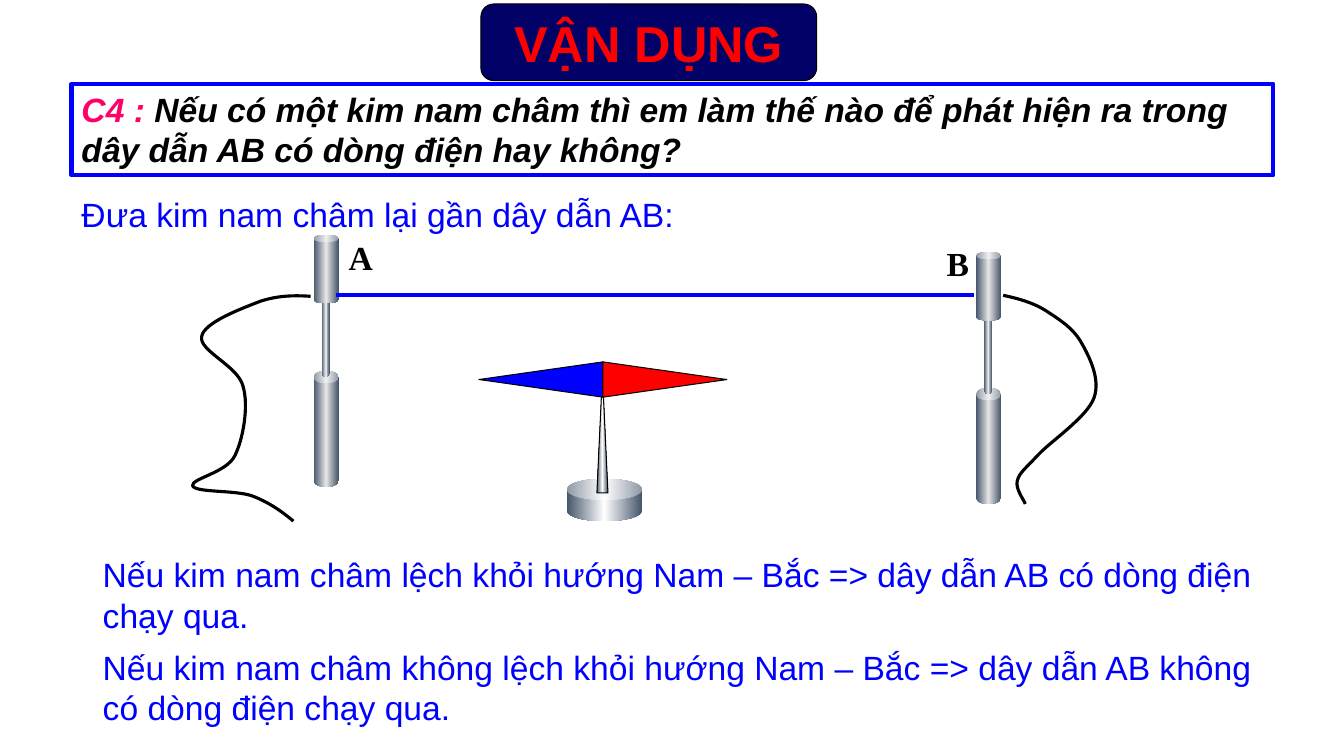
from copy import deepcopy
from dataclasses import dataclass

from pptx import Presentation
from pptx.dml.color import RGBColor
from pptx.enum.shapes import MSO_CONNECTOR, MSO_SHAPE
from pptx.enum.text import MSO_ANCHOR, MSO_AUTO_SIZE, PP_ALIGN
from pptx.oxml.ns import qn
from pptx.oxml.xmlchemy import OxmlElement
from pptx.util import Pt

PX = 9144  # EMU in one px, 100 px to the inch


@dataclass(frozen=True)
class Theme:
    blue: str = "0000FF"
    red: str = "FF0000"
    pink: str = "FF0066"
    navy: str = "000066"
    black: str = "000000"
    white: str = "FFFFFF"
    steel: str = "44546A"
    silver: str = "E7E6E6"
    sans: str = "Arial"
    serif: str = "Times New Roman"
    title_size: int = 36
    body_size: int = 24
    thin: float = 0.75
    lead: float = 2.25
    thick: float = 3


THEME = Theme()


@dataclass(frozen=True)
class Box:
    left: int
    top: int
    width: int
    height: int

    def inside(self, left, top, width, height):
        return Box(self.left + left, self.top + top, width, height)

    def emu(self):
        return [value * PX for value in (self.left, self.top, self.width, self.height)]


def set_line(shape, color=None, width=THEME.thin):
    if color is None:
        shape.line.fill.background()
    else:
        shape.line.color.rgb = RGBColor.from_string(color)
        shape.line.width = Pt(width)


def add_shape(shapes, kind, box, fill=None, line=None, width=THEME.thin, rotation=0):
    shape = shapes.add_shape(kind, *box.emu())
    shape.shadow.inherit = False
    shape.rotation = rotation
    if fill:
        shape.fill.solid()
        shape.fill.fore_color.rgb = RGBColor.from_string(fill)
    else:
        shape.fill.background()
    set_line(shape, line, width)
    return shape


def add_metal(shapes, kind, box, shine, bend=0.5, line=None):
    """Add a shape with a steel gradient that shines in the middle."""
    shape = add_shape(shapes, kind, box, line=line)
    shape.adjustments[0] = bend
    shape.fill.gradient()
    shape.fill.gradient_angle = 0
    first = next(shape._element.iter(qn("a:gs")))
    first.addnext(deepcopy(first))
    colors = (THEME.steel, shine, THEME.steel)
    for stop, position, color in zip(shape.fill.gradient_stops, (0, 0.5, 1), colors):
        stop.position = position
        stop.color.rgb = RGBColor.from_string(color)
    return shape


def write(shape, *runs, font=THEME.sans, size=THEME.body_size, bold=False,
          italic=False, align=PP_ALIGN.LEFT, anchor=MSO_ANCHOR.TOP, wrap=True, grow=True):
    """Write (text, color) runs as the one paragraph of a shape."""
    frame = shape.text_frame
    frame.word_wrap = wrap
    frame.vertical_anchor = anchor
    frame.auto_size = MSO_AUTO_SIZE.SHAPE_TO_FIT_TEXT if grow else MSO_AUTO_SIZE.NONE
    paragraph = frame.paragraphs[0]
    paragraph.alignment = align
    for text, color in runs:
        run = paragraph.add_run()
        run.text = text
        run.font.name = font
        run.font.size = Pt(size)
        run.font.bold = bold
        run.font.italic = italic
        run.font.color.rgb = RGBColor.from_string(color)


def add_text(shapes, box, text, color=THEME.blue, **style):
    write(shapes.add_textbox(*box.emu()), (text, color), **style)


def add_curve(shapes, box, start, points):
    """Draw cubic curves; points are taken in threes, relative to the box."""
    builder = shapes.build_freeform(*start, scale=PX)
    builder.add_line_segments(points, close=False)
    shape = builder.convert_to_shape(box.left * PX, box.top * PX)
    shape.shadow.inherit = False
    shape.fill.background()
    set_line(shape, THEME.black, THEME.lead)
    segments = list(shape._element.iter(qn("a:lnTo")))
    for index in range(0, len(segments), 3):
        curve = OxmlElement("a:cubicBezTo")
        segments[index].addprevious(curve)
        for segment in segments[index:index + 3]:
            curve.append(segment[0])
            segment.getparent().remove(segment)


def add_pole(shapes, box):
    group = shapes.add_group_shape().shapes
    parts = (
        (box.inside(0, 135, box.width, 115), 0.48),
        (box.inside(8, 47, 8, 94), 1.185),
        (box.inside(0, 0, box.width, 68), 0.282),
    )
    for part, bend in parts:
        add_metal(group, MSO_SHAPE.CAN, part, THEME.silver, bend)


def add_wire(shapes, box):
    left, top, width, _ = box.emu()
    wire = shapes.add_connector(MSO_CONNECTOR.STRAIGHT, left, top, left + width, top)
    wire._element.spPr.append(OxmlElement("a:effectLst"))
    set_line(wire, THEME.blue, THEME.thick)
    # The line must come before the effect list.
    effects = wire._element.spPr.find(qn("a:effectLst"))
    wire._element.spPr.append(effects)


def add_circuit(shapes, box):
    add_pole(shapes, box.inside(122, 0, 25, 250))
    add_wire(shapes, box.inside(144, 60, 633, 0))
    add_curve(shapes, box.inside(806, 60, 98, 207), (0, 0), [
        (14, 3), (29, 7), (42, 15), (54, 23), (68, 31), (77, 46),
        (85, 60), (97, 83), (90, 102), (83, 121), (47, 145), (35, 158),
        (22, 172), (16, 176), (14, 184), (12, 192), (20, 202), (22, 207)])
    add_curve(shapes, box.inside(0, 60, 119, 224), (119, 1), [
        (103, 0), (87, 0), (69, 6), (51, 13), (13, 27), (11, 41),
        (8, 55), (47, 70), (52, 90), (58, 110), (52, 143), (44, 159),
        (36, 176), (0, 182), (2, 189), (5, 196), (44, 193), (61, 199),
        (77, 205), (90, 214), (102, 224)])
    add_pole(shapes, box.inside(779, 17, 25, 250))
    for label, left, top in (("A", 147, -3), ("B", 740, 3)):
        add_text(shapes, box.inside(left, top, 50, 50), label, THEME.black,
                 font=THEME.serif, bold=True)


def add_compass(shapes, box):
    add_metal(shapes, MSO_SHAPE.CAN, box.inside(87, 116, 75, 42), THEME.white)
    add_metal(shapes, MSO_SHAPE.ISOSCELES_TRIANGLE, box.inside(117, 13, 11, 117),
              THEME.white, line=THEME.black)
    needle = shapes.add_group_shape().shapes
    for left, color, rotation in ((44, THEME.blue, 90), (167, THEME.red, 270)):
        add_shape(needle, MSO_SHAPE.FLOWCHART_MERGE, box.inside(left, -44, 35, 123),
                  color, THEME.black, rotation=rotation)


def add_title(shapes, box):
    title = add_shape(shapes, MSO_SHAPE.ROUNDED_RECTANGLE, box, THEME.navy, THEME.black)
    write(title, ("VẬN DỤNG", THEME.red), size=THEME.title_size, bold=True,
          align=PP_ALIGN.CENTER, anchor=MSO_ANCHOR.MIDDLE, wrap=False, grow=False)


def add_question(shapes, box):
    question = add_shape(shapes, MSO_SHAPE.RECTANGLE, box, line=THEME.blue,
                         width=THEME.thick)
    write(question, ("C4 : ", THEME.pink),
          ("Nếu có một kim nam châm thì em làm thế nào để phát hiện ra trong "
           "dây dẫn AB có dòng điện hay không?", THEME.black), bold=True, italic=True)


def add_conclusions(shapes, box):
    conclusions = (
        "Nếu kim nam châm lệch khỏi hướng Nam – Bắc => dây dẫn AB có dòng điện chạy qua.",
        "Nếu kim nam châm không lệch khỏi hướng Nam – Bắc => dây dẫn AB không "
        "có dòng điện chạy qua.",
    )
    for row, text in enumerate(conclusions):
        add_text(shapes, box.inside(0, row * 92, box.width, 91), text)


def main():
    presentation = Presentation()
    presentation.slide_width, presentation.slide_height = 1333 * PX, 750 * PX
    shapes = presentation.slides.add_slide(presentation.slide_layouts[6]).shapes
    add_circuit(shapes, Box(189, 233, 904, 284))
    add_conclusions(shapes, Box(92, 545, 1171, 183))
    add_compass(shapes, Box(475, 359, 246, 158))
    add_title(shapes, Box(477, 4, 333, 76))
    add_question(shapes, Box(71, 83, 1192, 91))
    add_text(shapes, Box(71, 187, 1102, 50), "Đưa kim nam châm lại gần dây dẫn AB:")
    presentation.save("out.pptx")


if __name__ == "__main__":
    main()
